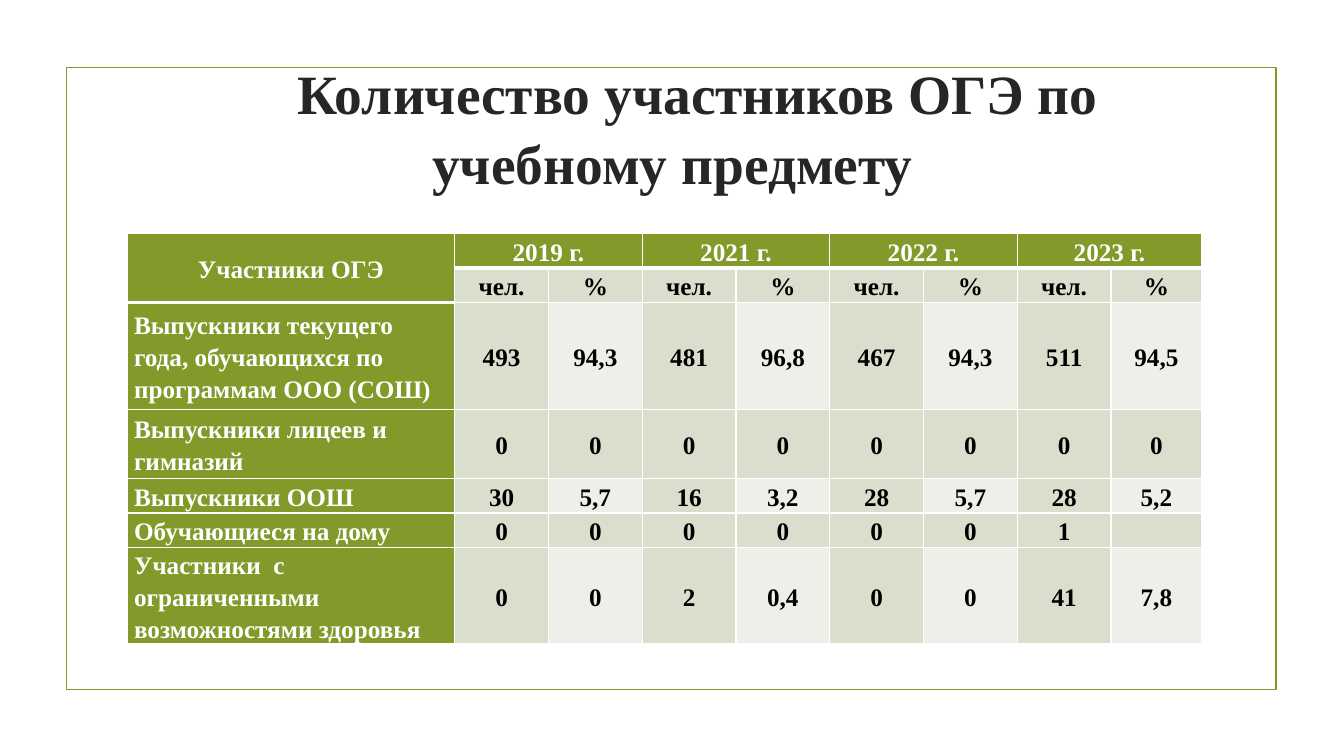
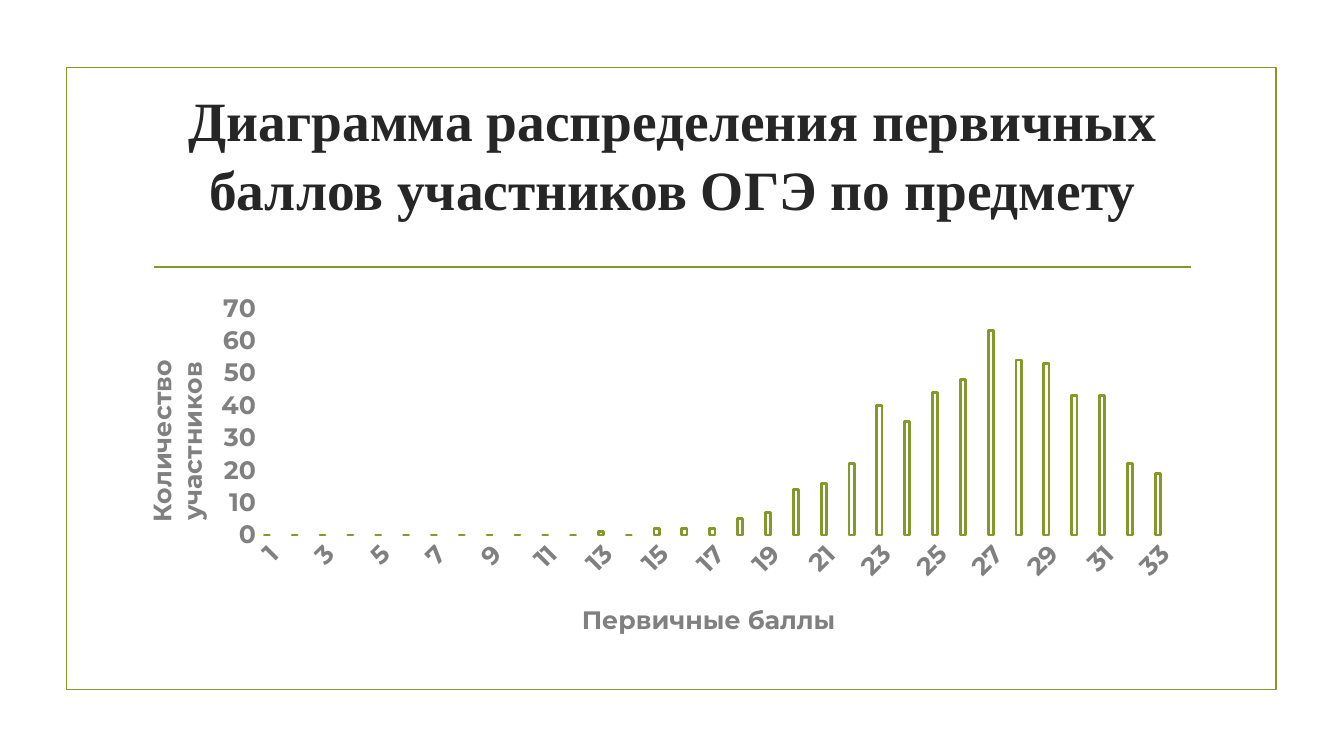
from dataclasses import dataclass

from pptx import Presentation
from pptx.chart.data import CategoryChartData
from pptx.dml.color import RGBColor
from pptx.enum.chart import XL_CHART_TYPE, XL_TICK_MARK
from pptx.enum.shapes import MSO_CONNECTOR, MSO_SHAPE
from pptx.enum.text import MSO_ANCHOR, MSO_AUTO_SIZE, PP_ALIGN
from pptx.oxml import parse_xml
from pptx.oxml.ns import nsdecls, qn
from pptx.util import Inches, Pt

COLUMNS = XL_CHART_TYPE.COLUMN_CLUSTERED
NO_TICK = XL_TICK_MARK.NONE
STRAIGHT = MSO_CONNECTOR.STRAIGHT
RECTANGLE = MSO_SHAPE.RECTANGLE
MIDDLE = MSO_ANCHOR.MIDDLE
NO_AUTOFIT = MSO_AUTO_SIZE.NONE
CENTER, LEFT = PP_ALIGN.CENTER, PP_ALIGN.LEFT
TITLE_ONLY = 5


@dataclass(frozen=True)
class Theme:
    green: str = "83992A"
    blue: str = "44709D"
    orange: str = "D97828"
    band: str = "D9DECD"
    band_light: str = "EDEFE8"
    title: str = "262626"
    axis: str = "808080"
    black: str = "000000"
    white: str = "FFFFFF"
    serif: str = "Times New Roman"
    sans: str = "Montserrat"
    title_size: float = 39.6
    text_size: float = 18
    rule_width: float = 1.25
    bar_line: float = 2
    cell_line: float = 1
    header_line: float = 3


THEME = Theme()


def rgb(value):
    return RGBColor.from_string(value)


def style_font(font, face, size, color):
    font.name, font.size, font.bold = face, Pt(size), True
    font.color.rgb = rgb(color)


def set_layout(element, index, x, y, w=None, h=None):
    """Place a chart part by fractions of the chart's size."""
    for old in element.findall(qn("c:layout")):
        element.remove(old)
    target = '<c:layoutTarget val="inner"/>' if w else ""
    modes = '<c:xMode val="edge"/><c:yMode val="edge"/>'
    sizes = f'<c:w val="{w}"/><c:h val="{h}"/>' if w else ""
    element.insert(index, parse_xml(
        f'<c:layout {nsdecls("c")}><c:manualLayout>{target}{modes}'
        f'<c:x val="{x}"/><c:y val="{y}"/>{sizes}</c:manualLayout></c:layout>'))


class Deck:
    def __init__(self, theme):
        self.theme = theme
        self.prs = Presentation()
        self.prs.slide_width, self.prs.slide_height = Inches(13.33), Inches(7.5)
        self.slide = None

    # Shared frame, rule and title
    def new_slide(self, title, title_height):
        t = self.theme
        self.slide = self.prs.slides.add_slide(self.prs.slide_layouts[TITLE_ONLY])
        shapes = self.slide.shapes
        heading = shapes.title
        frame = shapes.add_shape(RECTANGLE, Inches(0.66), Inches(0.67),
                                 Inches(12), Inches(6.17))
        frame.shadow.inherit = False
        frame.fill.background()
        rule = shapes.add_connector(STRAIGHT, Inches(1.53), Inches(2.65),
                                    Inches(11.81), Inches(2.65))
        rule._element.spPr.append(parse_xml(f'<a:effectLst {nsdecls("a")}/>'))
        for outlined in (frame, rule):
            outlined.line.color.rgb = rgb(t.green)
            outlined.line.width = Pt(t.rule_width)

        heading.left, heading.top = Inches(1.42), Inches(1.07)
        heading.width, heading.height = Inches(10.5), Inches(title_height)
        text = heading.text_frame
        text.text = title
        text.word_wrap, text.auto_size = True, NO_AUTOFIT
        text.vertical_anchor = MIDDLE
        paragraph = text.paragraphs[0]
        paragraph.alignment, paragraph.line_spacing = CENTER, 1.05
        for run in paragraph.runs:
            style_font(run.font, t.serif, t.title_size, t.title)

    # Table cells
    def cell(self, cell, text, fill, color, align, bottom):
        t = self.theme
        cell.margin_left = cell.margin_right = Inches(0.07)
        cell.margin_top = cell.margin_bottom = 0
        cell.vertical_anchor = MIDDLE
        cell.text = text
        paragraph = cell.text_frame.paragraphs[0]
        paragraph.alignment, paragraph.line_spacing = align, 1.15
        style_font(paragraph.font, t.serif, t.text_size, color)
        for run in paragraph.runs:
            style_font(run.font, t.serif, t.text_size, color)
        cell.fill.solid()
        cell.fill.fore_color.rgb = rgb(fill)
        properties = cell._tc.get_or_add_tcPr()
        for index, side in enumerate("LRTB"):
            width = Pt(bottom if side == "B" else t.cell_line)
            properties.insert(index, parse_xml(
                f'<a:ln{side} {nsdecls("a")} w="{width}"><a:solidFill>'
                f'<a:srgbClr val="{t.white}"/></a:solidFill></a:ln{side}>'))

    def participants_table(self, rows, widths, heights, at):
        t = self.theme
        table = self.slide.shapes.add_table(
            len(rows), len(widths), Inches(at[0]), Inches(at[1]),
            Inches(sum(widths)), Inches(sum(heights))).table
        table.first_row = table.horz_banding = False
        for column, width in zip(table.columns, widths):
            column.width = Inches(width)
        for row, height in zip(table.rows, heights):
            row.height = Inches(height)
        for r, row in enumerate(rows):
            for c, text in enumerate(row):
                header = r == 0 or c == 0
                light = r > 1 and r % 2 == 0 and c % 2 == 0
                fill = t.green if header else t.band_light if light else t.band
                thick = r == 0 or (r, c) == (1, 0)
                self.cell(table.cell(r, c), text, fill,
                          t.white if header else t.black,
                          LEFT if c == 0 and r > 1 else CENTER,
                          t.header_line if thick else t.cell_line)
        table.cell(0, 0).merge(table.cell(1, 0))
        for c in range(1, len(widths), 2):
            table.cell(0, c).merge(table.cell(0, c + 1))

    # Chart axes
    def axis(self, axis, title, x, y, title_turn, label_turn):
        t = self.theme
        axis.has_major_gridlines = False
        axis.major_tick_mark = axis.minor_tick_mark = NO_TICK
        axis.format.line.fill.background()
        style_font(axis.tick_labels.font, t.sans, t.text_size, t.axis)
        labels = axis._element.find(qn("c:txPr")).find(qn("a:bodyPr"))
        labels.set("rot", str(label_turn * 60000))
        caption = axis.axis_title.text_frame
        caption.text = title
        style_font(caption.paragraphs[0].runs[0].font, t.sans, t.text_size, t.axis)
        body = caption._txBody.find(qn("a:bodyPr"))
        body.set("rot", str(title_turn * 60000))
        body.set("vert", "horz")
        set_layout(axis.axis_title._element, 1, x, y)

    def score_chart(self, categories, series, at):
        t = self.theme
        data = CategoryChartData()
        data.categories = categories
        for name, values in series:
            data.add_series(name, values)
        chart = self.slide.shapes.add_chart(
            COLUMNS, *(Inches(length) for length in at), data).chart
        chart.has_legend = chart.has_title = False
        style_font(chart.font, t.sans, t.text_size, t.black)
        plot = chart.plots[0]
        plot.gap_width, plot.overlap = 164, -35
        plot.vary_by_categories = False
        for bars, color in zip(plot.series, (t.green, t.blue, t.orange)):
            bars.format.fill.background()
            bars.format.line.color.rgb = rgb(color)
            bars.format.line.width = Pt(t.bar_line)
        scale = chart.value_axis
        scale.minimum_scale, scale.maximum_scale, scale.major_unit = 0, 70, 10
        self.axis(chart.category_axis, "Первичные баллы", 0.43, 0.85, 0, -45)
        self.axis(scale, "Количество участников", 0.03, 0.19, -90, 0)
        plot_area = chart._chartSpace.chart.plotArea
        set_layout(plot_area, 0, 0.14, 0.06, 0.84, 0.62)


PARTICIPANTS = [
    ["Участники ОГЭ", "2019 г.", "", "2021 г.", "", "2022 г.", "", "2023 г.", ""],
    [""] + ["чел.", "%"] * 4,
    ["Выпускники текущего года, обучающихся по программам ООО (СОШ)",
     "493", "94,3", "481", "96,8", "467", "94,3", "511", "94,5"],
    ["Выпускники лицеев и гимназий"] + ["0"] * 8,
    ["Выпускники ООШ", "30", "5,7", "16", "3,2", "28", "5,7", "28", "5,2"],
    ["Обучающиеся на дому"] + ["0"] * 6 + ["1", ""],
    ["Участники  с ограниченными возможностями здоровья",
     "0", "0", "2", "0,4", "0", "0", "41", "7,8"],
]

SCORE_COUNTS = [0] * 12 + [1, 0, 2, 2, 2, 5, 7, 14, 16, 22, 40, 35, 44, 48,
                           63, 54, 53, 43, 43, 22, 19]


def main():
    deck = Deck(THEME)

    # Participants by year
    deck.new_slide("\tКоличество участников ОГЭ по учебному предмету", 0.35)
    deck.participants_table(PARTICIPANTS, [3.25] + [0.93] * 7 + [0.9],
                            [0.34, 0.34, 1.06, 0.69, 0.34, 0.34, 0.96],
                            (1.26, 2.32))

    # Distribution of primary scores
    deck.new_slide("Диаграмма распределения первичных баллов "
                   "участников ОГЭ по предмету", 0.88)
    scores = [str(score) for score in range(1, len(SCORE_COUNTS) + 1)]
    unfilled = [None] * len(scores)
    deck.score_chart(scores, [("Series 1", SCORE_COUNTS), ("Series 2", unfilled),
                              ("Series 3", unfilled)], (1.06, 2.84, 10.85, 3.63))

    deck.prs.save("out.pptx")


if __name__ == "__main__":
    main()
